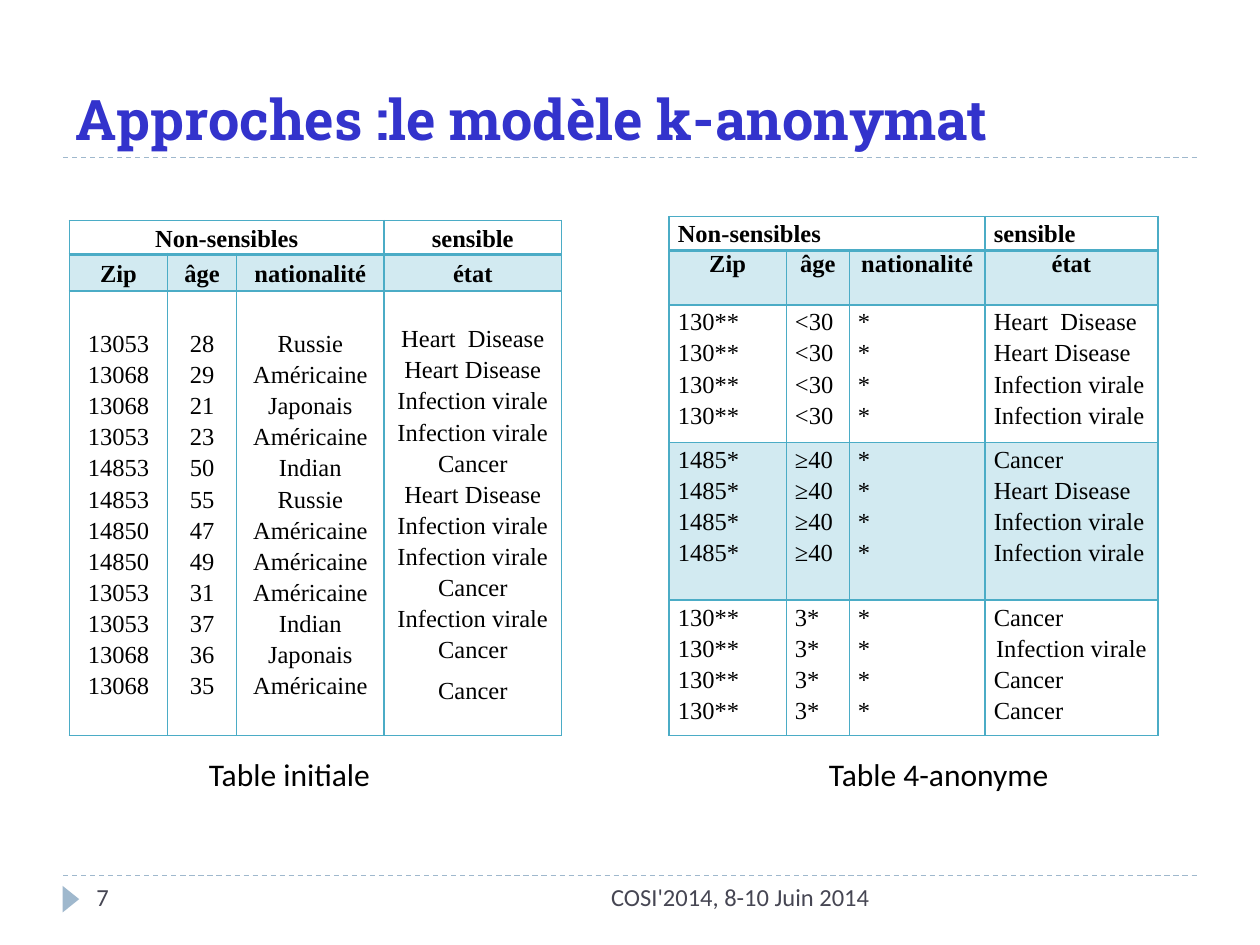
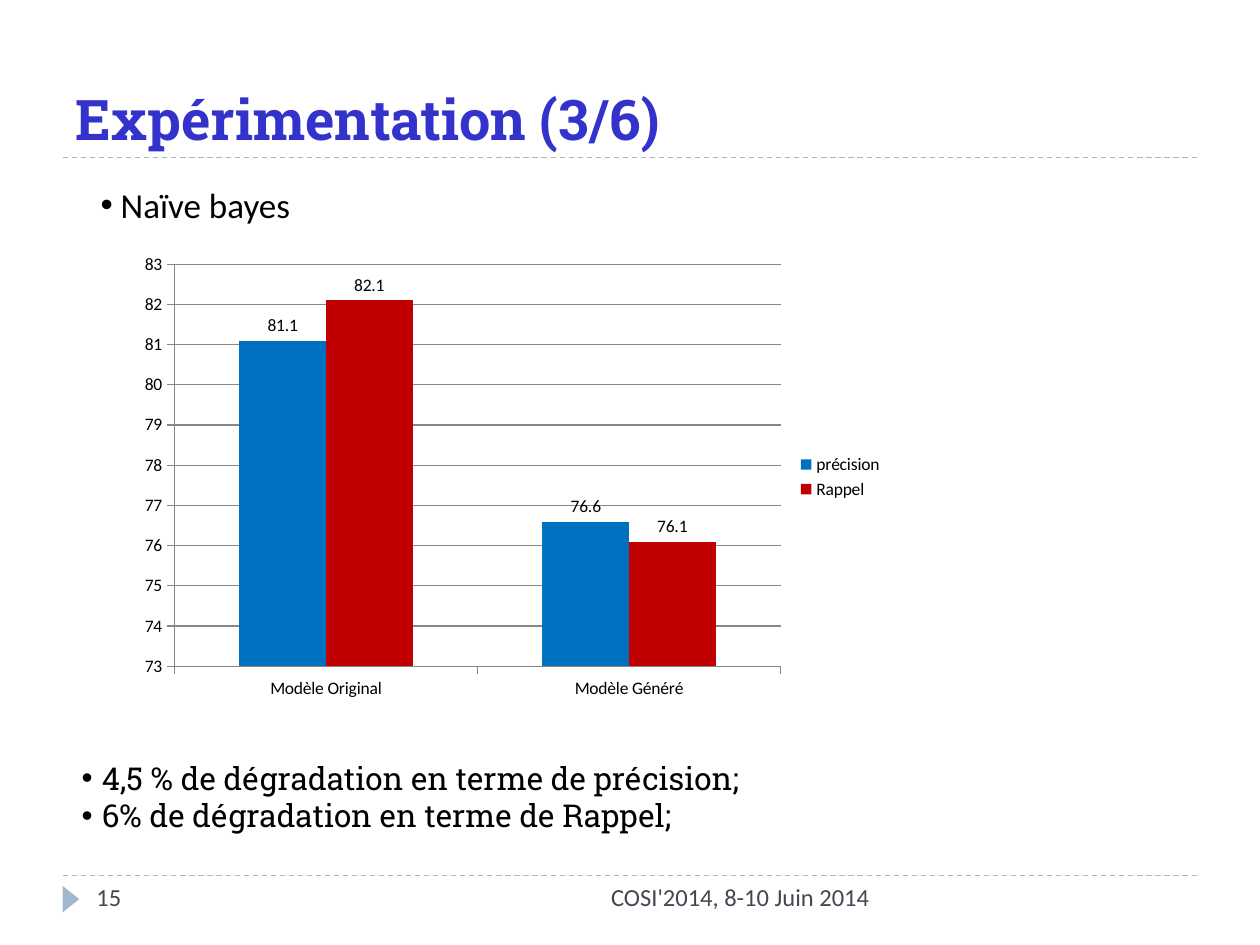
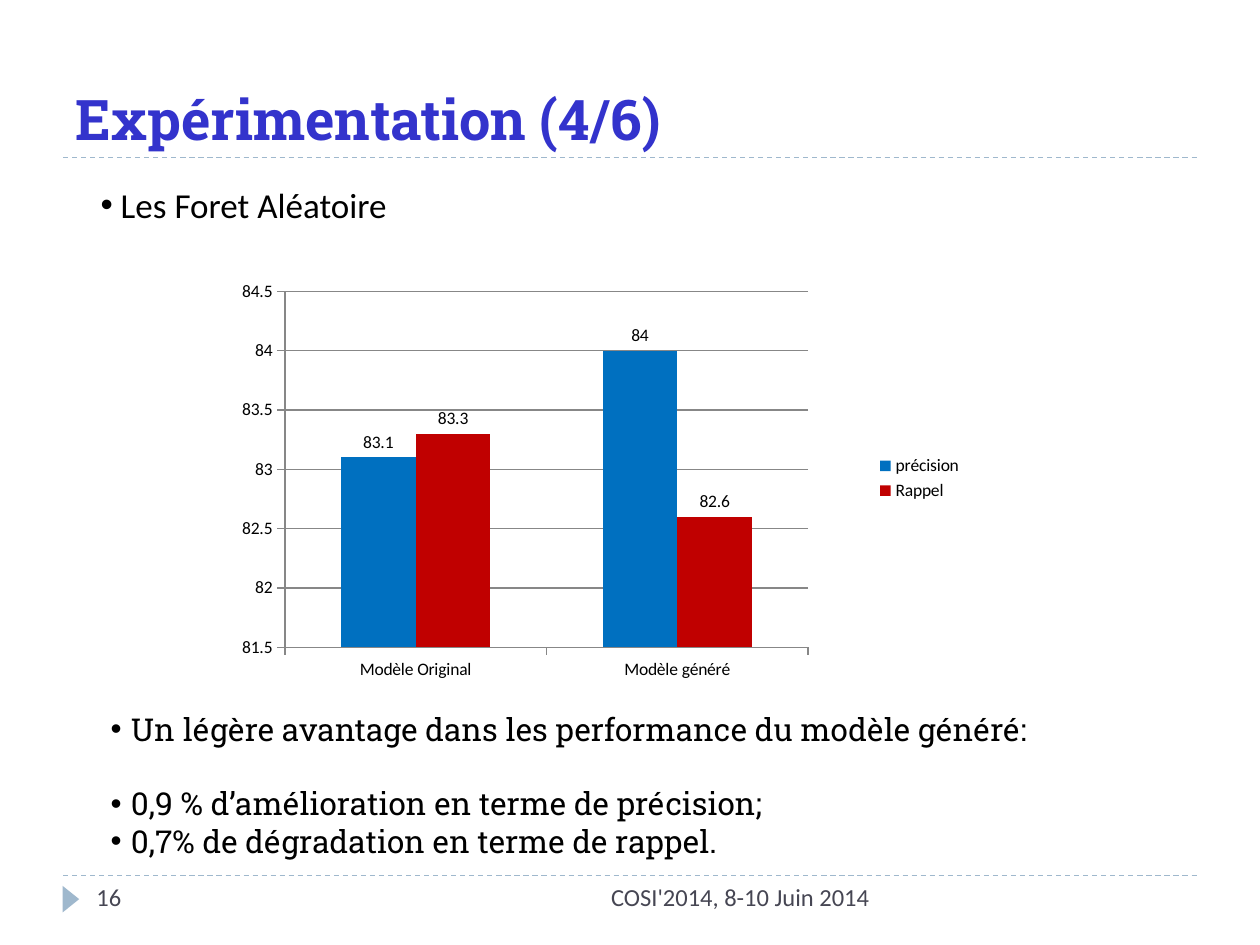
"""Build three slides on k-anonymity: two tables and two experiment charts."""
import pptx
import pptx.chart.data
import pptx.dml.color
import pptx.enum.chart
import pptx.enum.dml
import pptx.enum.shapes
import pptx.enum.text
import pptx.oxml.ns
import pptx.util
from lxml import etree

Pt = pptx.util.Pt
qn = pptx.oxml.ns.qn
ALIGN = pptx.enum.text.PP_ALIGN
ANCHOR = pptx.enum.text.MSO_ANCHOR
SHAPE = pptx.enum.shapes.MSO_SHAPE

BLUE, PALE, BLACK, GREY = "3333CC", "9FB8CD", "000000", "464653"
TEAL, TINT, GRID = "4BACC6", "D2EAF1", "878787"
SERIES_COLORS = ["0070C0", "C00000"]
SLAB, SANS, SERIF = "Roboto Slab", "Calibri", "Times New Roman"


def rgb(color):
    return pptx.dml.color.RGBColor.from_string(color)


def points(box):
    return [Pt(v) for v in box]


def style(p, size, font, color=BLACK, bold=False):
    for r in p.runs:
        r.font.size, r.font.name, r.font.bold = Pt(size), font, bold
        r.font.color.rgb = rgb(color)


def add_text(s, box, text, size, font, color=BLACK, bold=False,
             align=ALIGN.LEFT, anchor=ANCHOR.TOP, wrap=True):
    tf = s.shapes.add_textbox(*points(box)).text_frame
    tf.word_wrap, tf.vertical_anchor = wrap, anchor
    tf.text = text
    for p in tf.paragraphs:
        p.alignment = align
        style(p, size, font, color, bold)
    return tf


def add_bullets(s, box, text, size, font):
    tf = add_text(s, box, text, size, font)
    for p in tf.paragraphs:
        pPr = p._p.get_or_add_pPr()
        pPr.set("marL", str(Pt(11.5)))
        pPr.set("indent", str(-Pt(11.5)))
        etree.SubElement(pPr, qn("a:buFont"), typeface="Arial")
        etree.SubElement(pPr, qn("a:buChar"), char="•")
    return tf


def add_rule(s, x, y, w):
    line = s.shapes.add_connector(
        pptx.enum.shapes.MSO_CONNECTOR.STRAIGHT, Pt(x), Pt(y), Pt(x + w), Pt(y))
    line.line.color.rgb = rgb(PALE)
    line.line.width = Pt(0.75)
    line.line.dash_style = pptx.enum.dml.MSO_LINE.DASH
    etree.SubElement(line._element.spPr, qn("a:effectLst"))


def add_header(s, box, title):
    x, y, w, h = box
    add_rule(s, x, y + h, w)
    add_text(s, box, title, 32, SLAB, BLUE, True, anchor=ANCHOR.BOTTOM)


def add_footer(s, box, number):
    x, y, w, h = box
    add_rule(s, x, y, w)
    sp = s.shapes.add_shape(SHAPE.ISOSCELES_TRIANGLE,
                            *points((x - 3, y + 8.7, 15.1, 9.4)))
    sp.rotation = 90
    sp.shadow.inherit = False
    sp.fill.solid()
    sp.fill.fore_color.rgb = rgb(PALE)
    sp.line.fill.background()
    add_text(s, (x + 12, y, 156, h), str(number), 14, SANS, GREY)
    add_text(s, (x + 192, y, 276, h), "COSI'2014, 8-10 Juin 2014", 14, SANS,
             GREY, align=ALIGN.RIGHT)


def add_slide(prs, title, number):
    s = prs.slides.add_slide(prs.slide_layouts[6])
    add_header(s, (36, 12.2, 648, 77.8), title)
    add_footer(s, (36, 500.4, 648, 28.8), number)
    return s


def set_borders(cell, row):
    tcPr = cell._tc.get_or_add_tcPr()
    for side in "LRTB":
        thick = (row, side) in {(0, "B"), (1, "T")}
        ln = etree.SubElement(tcPr, qn("a:ln" + side),
                              w=str(Pt(2.25 if thick else 1)))
        fill = etree.SubElement(ln, qn("a:solidFill"))
        etree.SubElement(fill, qn("a:srgbClr"), val=TEAL)


def fill_cell(cell, row, text, align, anchor, spacing, shaded):
    set_borders(cell, row)
    if shaded:
        cell.fill.solid()
        cell.fill.fore_color.rgb = rgb(TINT)
    else:
        cell.fill.background()
    cell.margin_left = cell.margin_right = Pt(5)
    cell.margin_top = cell.margin_bottom = 0
    cell.vertical_anchor = anchor
    cell.text_frame.text = text
    for p in cell.text_frame.paragraphs:
        p.alignment, p.line_spacing = align, spacing
        style(p, 14, SERIF, bold=row < 2)


def add_grid(s, x, y, widths, heights, body, shaded, centred):
    """Draw a two-row header and the body rows, centred throughout or only in row 1."""
    rows = [["Non-sensibles", "", "", "sensible"],
            ["Zip", "âge", "nationalité", "état"]] + body
    box = x, y, sum(widths), sum(heights)
    tbl = s.shapes.add_table(len(heights), len(widths), *points(box)).table
    tbl.first_row = tbl.horz_banding = False
    for col, w in zip(tbl.columns, widths):
        col.width = Pt(w)
    for i, (row, h) in enumerate(zip(rows, heights)):
        tbl.rows[i].height = Pt(h)
        for j, text in enumerate(row):
            fill_cell(tbl.cell(i, j), i, text,
                      ALIGN.CENTER if centred or i == 1 else ALIGN.LEFT,
                      ANCHOR.MIDDLE if centred else ANCHOR.TOP,
                      1.15 if centred or i != 1 else 1.0, i in shaded)
    tbl.cell(0, 0).merge(tbl.cell(0, 2))
    return tbl


def stack(text):
    return "\n".join(text.split())


def add_initial_table(s, x, y):
    states = ["Heart  Disease", "Heart Disease", "Infection virale", "Infection virale",
              "Cancer", "Heart Disease", "Infection virale", "Infection virale",
              "Cancer", "Infection virale", "Cancer", "Cancer"]
    body = [[stack("13053 13068 13068 13053 14853 14853 "
                   "14850 14850 13053 13053 13068 13068"),
             stack("28 29 21 23 50 55 47 49 31 37 36 35"),
             stack("Russie Américaine Japonais Américaine Indian Russie "
                   "Américaine Américaine Américaine Indian Japonais Américaine"),
             "\n".join(states)]]
    tbl = add_grid(s, x, y, [56.2, 39.4, 84.4, 101.3], [18, 20.9, 254.2],
                   body, {1}, True)
    tbl.cell(2, 3).text_frame.paragraphs[-1].line_spacing = 1.5
    add_text(s, (x + 72.7, y + 301.7, 110.9, 28.8), "Table initiale", 18, SANS,
             wrap=False)


def add_anonymous_table(s, x, y):
    groups = [
        ("130**", "<30", ["Heart  Disease", "Heart Disease",
                          "Infection virale", "Infection virale"]),
        ("1485*", "≥40", ["Cancer", "Heart Disease",
                          "Infection virale", "Infection virale"]),
        ("130**", "3*", ["Cancer", "Infection virale", "Cancer", "Cancer"]),
    ]
    body = [["\n".join([v] * 4) for v in (code, age, "*")] + ["\n".join(states)]
            for code, age, states in groups]
    tbl = add_grid(s, x, y, [67, 36, 77.6, 98.8], [17, 31.2, 78.7, 90, 71.3],
                   body, {1, 3}, False)
    tbl.cell(4, 3).text_frame.paragraphs[1].alignment = ALIGN.CENTER
    add_text(s, (x + 84.3, y + 303.9, 144, 28.8), "Table 4-anonyme", 18, SANS,
             wrap=False)


def set_plot_area(chart, fractions):
    plot_area = chart._chartSpace.chart.plotArea
    for old in plot_area.findall(qn("c:layout")):
        plot_area.remove(old)
    layout = etree.Element(qn("c:layout"))
    plot_area.insert(0, layout)
    manual = etree.SubElement(layout, qn("c:manualLayout"))
    settings = [("layoutTarget", "inner"), ("xMode", "edge"), ("yMode", "edge")]
    for tag, val in settings + list(zip("xywh", fractions)):
        etree.SubElement(manual, qn("c:" + tag), val=str(val))


def add_score_chart(s, box, cats, series, scale, fractions):
    data = pptx.chart.data.CategoryChartData()
    data.categories = cats
    for name, vals in series.items():
        data.add_series(name, vals)
    chart = s.shapes.add_chart(pptx.enum.chart.XL_CHART_TYPE.COLUMN_CLUSTERED,
                               *points(box), data).chart
    chart.has_title = False
    chart.font.size, chart.font.name = Pt(10), SANS
    chart.font.color.rgb = rgb(BLACK)
    chart.has_legend = True
    chart.legend.position = pptx.enum.chart.XL_LEGEND_POSITION.RIGHT
    chart.legend.include_in_layout = False
    axis = chart.value_axis
    axis.minimum_scale, axis.maximum_scale, axis.major_unit = scale
    axis.has_major_gridlines = True
    for line in (axis.major_gridlines.format.line, axis.format.line,
                 chart.category_axis.format.line):
        line.color.rgb = rgb(GRID)
        line.width = Pt(0.75)
    plot = chart.plots[0]
    plot.vary_by_categories = False
    plot.gap_width, plot.overlap = 150, 0
    for ser, color in zip(plot.series, SERIES_COLORS):
        ser.format.fill.solid()
        ser.format.fill.fore_color.rgb = rgb(color)
        ser.data_labels.show_value = True
        ser.data_labels.position = pptx.enum.chart.XL_LABEL_POSITION.OUTSIDE_END
    set_plot_area(chart, fractions)


def main():
    prs = pptx.Presentation()
    prs.slide_width, prs.slide_height = Pt(720), Pt(540)

    s = add_slide(prs, "Approches :le modèle k-anonymat", 7)
    add_initial_table(s, 39.6, 126)
    add_anonymous_table(s, 382.3, 123.8)

    s = add_slide(prs, "Expérimentation (3/6)", 15)
    add_bullets(s, (50.4, 101.5, 551.5, 31.7), "Naïve bayes", 20, SANS)
    add_score_chart(s, (73.4, 140.4, 438.5, 264.2),
                    ["Modèle Original", "Modèle Généré"],
                    {"précision": [81.1, 76.6], "Rappel": [82.1, 76.1]},
                    (73, 83, 1), (0.06, 0.04, 0.79, 0.87))
    add_bullets(s, (39.6, 430, 624, 53.3),
                "4,5 % de dégradation en terme de précision;\n"
                "6% de dégradation en terme de Rappel;", 18, SLAB)

    s = add_slide(prs, "Expérimentation (4/6)", 16)
    add_bullets(s, (50.4, 101.5, 450, 31.7), "Les Foret Aléatoire", 20, SANS)
    add_score_chart(s, (123.8, 146.2, 433.4, 254.2),
                    ["Modèle Original", "Modèle généré"],
                    {"précision": [83.1, 84], "Rappel": [83.3, 82.6]},
                    (81.5, 84.5, 0.5), (0.09, 0.08, 0.69, 0.8))
    tf = add_bullets(s, (56.2, 402, 540, 97.2),
                     "Un légère avantage dans les performance du modèle généré:\n"
                     "0,9 % d’amélioration en terme de précision;\n"
                     "0,7% de dégradation en terme de rappel.", 18, SLAB)
    tf.paragraphs[0].space_after = Pt(21)

    prs.save("out.pptx")


if __name__ == "__main__":
    main()
